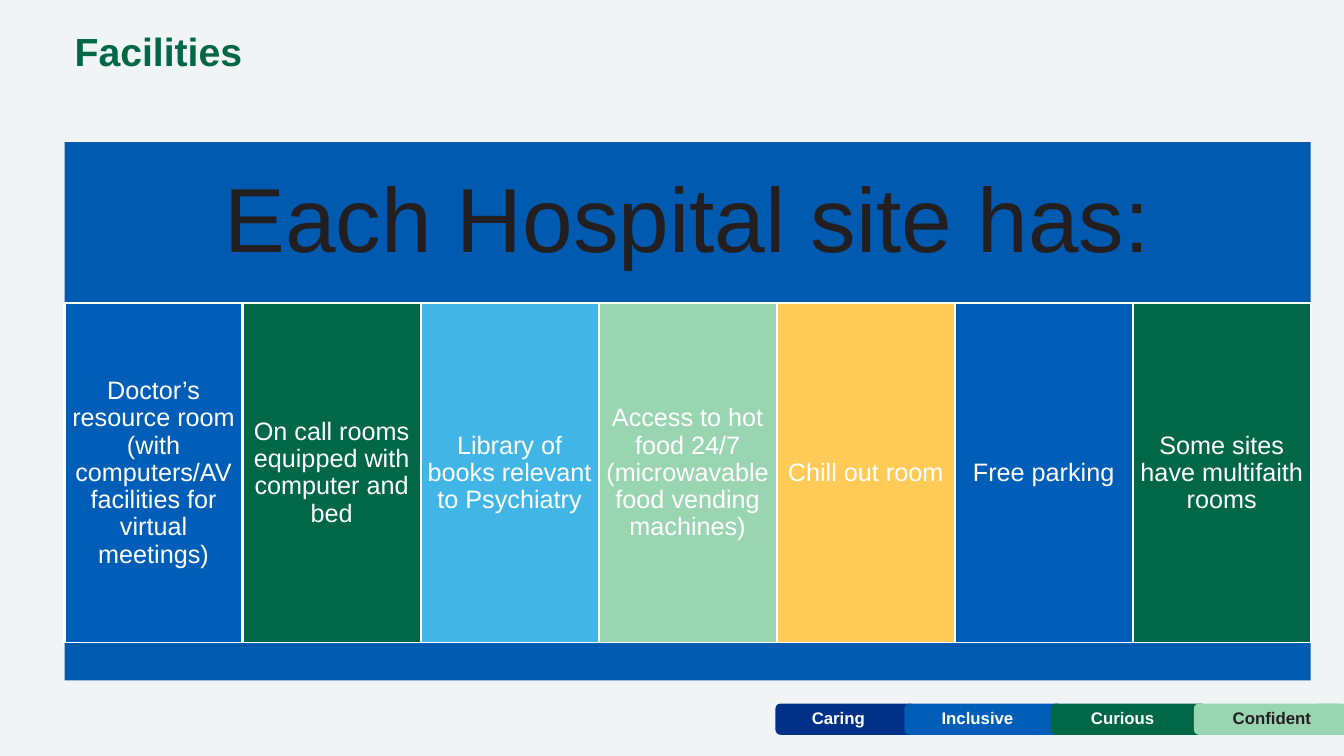
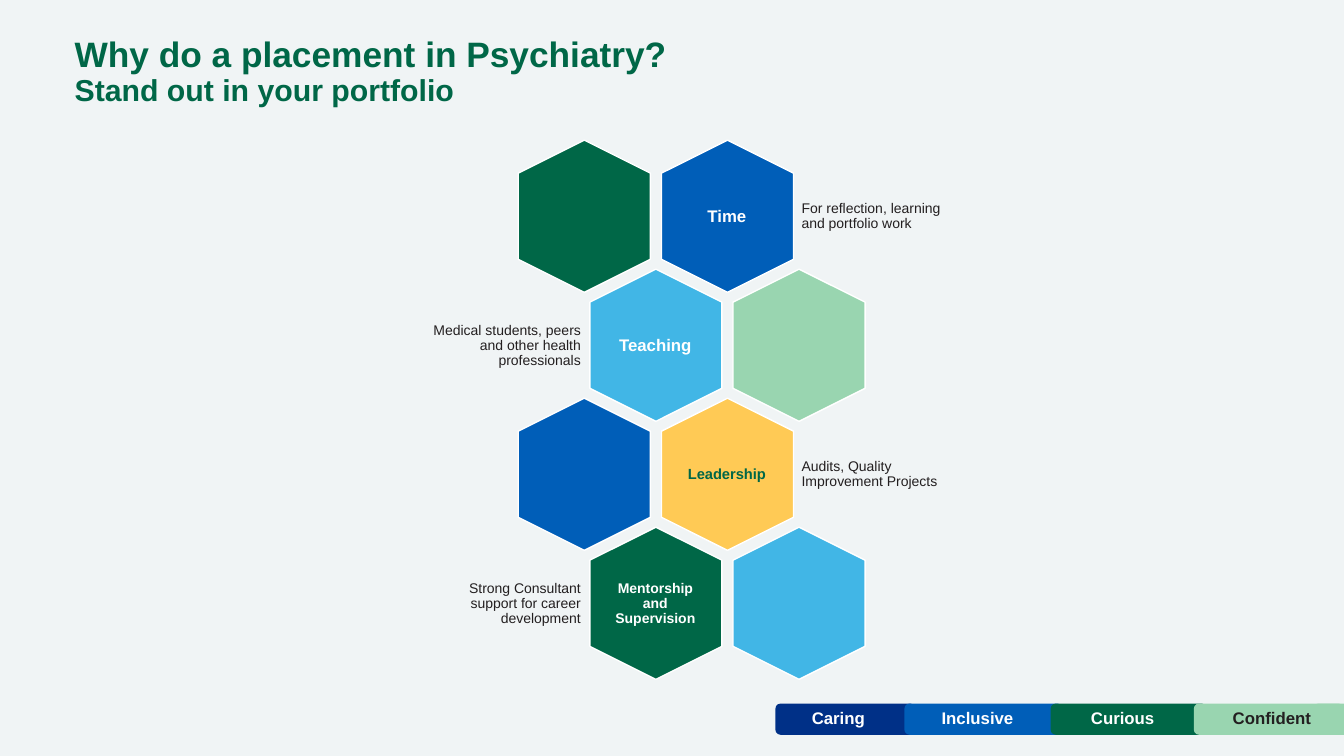
"""Build two slides on hospital facilities and psychiatry placements."""
from pptx import Presentation
from pptx.dml.color import RGBColor
from pptx.enum.shapes import MSO_SHAPE
from pptx.enum.text import MSO_ANCHOR, MSO_AUTO_SIZE, PP_ALIGN
from pptx.util import Inches, Pt

COLOURS = {
    "background": "F0F4F5",
    "navy": "003087",
    "blue": "005EB8",
    "band": "005AB0",
    "green": "006747",
    "sky": "41B6E6",
    "mint": "99D5B0",
    "yellow": "FFCA55",
    "white": "FFFFFF",
    "ink": "231F20",
}
FONT = "Arial"


def draw(page, preset, left, top, width, height, colour, outline=0):
    shape = page.shapes.add_shape(
        preset, Inches(left), Inches(top), Inches(width), Inches(height))
    shape.shadow.inherit = False
    shape.fill.solid()
    shape.fill.fore_color.rgb = RGBColor.from_string(COLOURS[colour])
    if outline:
        shape.line.color.rgb = RGBColor.from_string(COLOURS["white"])
        shape.line.width = Pt(outline)
    else:
        shape.line.fill.background()
    return shape


def write(box, text, size, colour, bold=False, align=PP_ALIGN.CENTER, margin=0.04):
    frame = box.text_frame
    frame.word_wrap = True
    frame.vertical_anchor = MSO_ANCHOR.MIDDLE
    frame.margin_left = frame.margin_right = Inches(margin)
    frame.margin_top = frame.margin_bottom = Inches(margin)
    paragraph = frame.paragraphs[0]
    paragraph.text = text
    paragraph.alignment = align
    paragraph.line_spacing = 0.9
    paragraph.font.name = FONT
    paragraph.font.size = Pt(size)
    paragraph.font.bold = bold
    paragraph.font.color.rgb = RGBColor.from_string(COLOURS[colour])


deck = Presentation()
deck.slide_width, deck.slide_height = Inches(13.33), Inches(7.5)
background = deck.slide_master.background.fill
background.solid()
background.fore_color.rgb = RGBColor.from_string(COLOURS["background"])

titles = [
    (0.27, [("Facilities", 28)]),
    (0.32, [("Why do a placement in Psychiatry?", 25.2),
            ("Stand out in your portfolio", 21.6)]),
]
footer_tabs = [
    ("Caring", 7.69, 1.39, 7.74, "navy", "white"),
    ("Inclusive", 8.97, 1.57, 9.12, "blue", "white"),
    ("Curious", 10.42, 1.55, 10.56, "green", "white"),
    ("Confident", 11.84, 1.49, 12.04, "mint", "ink"),
]

for title_top, lines in titles:
    page = deck.slides.add_slide(deck.slide_layouts[5])
    title = page.shapes.title
    title.left, title.top = Inches(0.64), Inches(title_top)
    title.width, title.height = Inches(9.16), Inches(0.85)
    title.text_frame.auto_size = MSO_AUTO_SIZE.NONE
    title.text_frame.vertical_anchor = MSO_ANCHOR.TOP
    paragraph = title.text_frame.paragraphs[0]
    paragraph.alignment = PP_ALIGN.LEFT
    paragraph.line_spacing = 0.9
    paragraph.font.name = FONT
    paragraph.font.bold = True
    paragraph.font.color.rgb = RGBColor.from_string(COLOURS["green"])
    for index, (text, size) in enumerate(lines):
        if index:
            paragraph.add_line_break()
        span = paragraph.add_run()
        span.text = text
        span.font.size = Pt(size)

    corner = draw(page, MSO_SHAPE.ROUND_2_SAME_RECTANGLE, 13.02, 6.98, 0.31, 0.31, "mint")
    corner.rotation = 270
    for label, left, width, label_left, colour, text_colour in footer_tabs:
        draw(page, MSO_SHAPE.ROUNDED_RECTANGLE, left, 6.98, width, 0.31, colour)
        box = page.shapes.add_textbox(
            Inches(label_left), Inches(7.03), Inches(1.15), Inches(0.2))
        write(box, label, 12, text_colour, bold=True, margin=0)

facilities_page, portfolio_page = deck.slides

facilities = [
    ("Doctor’s resource room (with computers/AV facilities for virtual meetings)", "blue"),
    ("On call rooms equipped with computer and bed", "green"),
    ("Library of books relevant to Psychiatry", "sky"),
    ("Access to hot food 24/7 (microwavable food vending machines)", "mint"),
    ("Chill out room", "yellow"),
    ("Free parking", "blue"),
    ("Some sites have multifaith rooms", "green"),
]
panel_left, panel_width = 0.64, 12.36
column_width = panel_width / len(facilities)
header = draw(facilities_page, MSO_SHAPE.RECTANGLE, panel_left, 1.41, panel_width, 1.6, "band")
write(header, "Each Hospital site has:", 65, "ink", margin=0.27)
for index, (text, colour) in enumerate(facilities):
    column = draw(facilities_page, MSO_SHAPE.RECTANGLE, panel_left + index * column_width,
                  3.01, column_width, 3.37, colour, outline=1.5)
    write(column, text, 18, "white", margin=0.07)
draw(facilities_page, MSO_SHAPE.RECTANGLE, panel_left, 6.38, panel_width, 0.37, "band")

benefits = [
    ("Time", 12, "white", "For reflection, learning and portfolio work", ("green", "blue")),
    ("Teaching", 12, "white", "Medical students, peers and other health professionals",
     ("sky", "mint")),
    ("Leadership", 10.5, "green", "Audits, Quality Improvement Projects", ("blue", "yellow")),
    ("Mentorship and Supervision", 10, "white",
     "Strong Consultant support for career development", ("green", "sky")),
]
for row, (name, size, name_colour, detail, fills) in enumerate(benefits):
    top = 1.49 + 1.28 * row
    shifted = row % 2
    row_left = 5.04 + 0.71 * shifted
    for column, colour in enumerate(fills):
        hexagon = draw(portfolio_page, MSO_SHAPE.HEXAGON, row_left + 1.42 * column, top,
                       1.51, 1.31, colour, outline=1)
        hexagon.adjustments[0] = 0.25
        hexagon.rotation = 90
    name_left = row_left + 1.42 * (1 - shifted) + 0.3
    name_box = portfolio_page.shapes.add_textbox(
        Inches(name_left), Inches(top + 0.14), Inches(0.9), Inches(1.04))
    write(name_box, name, size, name_colour, bold=True)
    detail_left, detail_width, align = (
        (4.17, 1.63, PP_ALIGN.RIGHT) if shifted else (7.91, 1.68, PP_ALIGN.LEFT))
    detail_box = portfolio_page.shapes.add_textbox(
        Inches(detail_left), Inches(top + 0.21), Inches(detail_width), Inches(0.9))
    write(detail_box, detail, 10, "ink", align=align)

deck.save("out.pptx")
